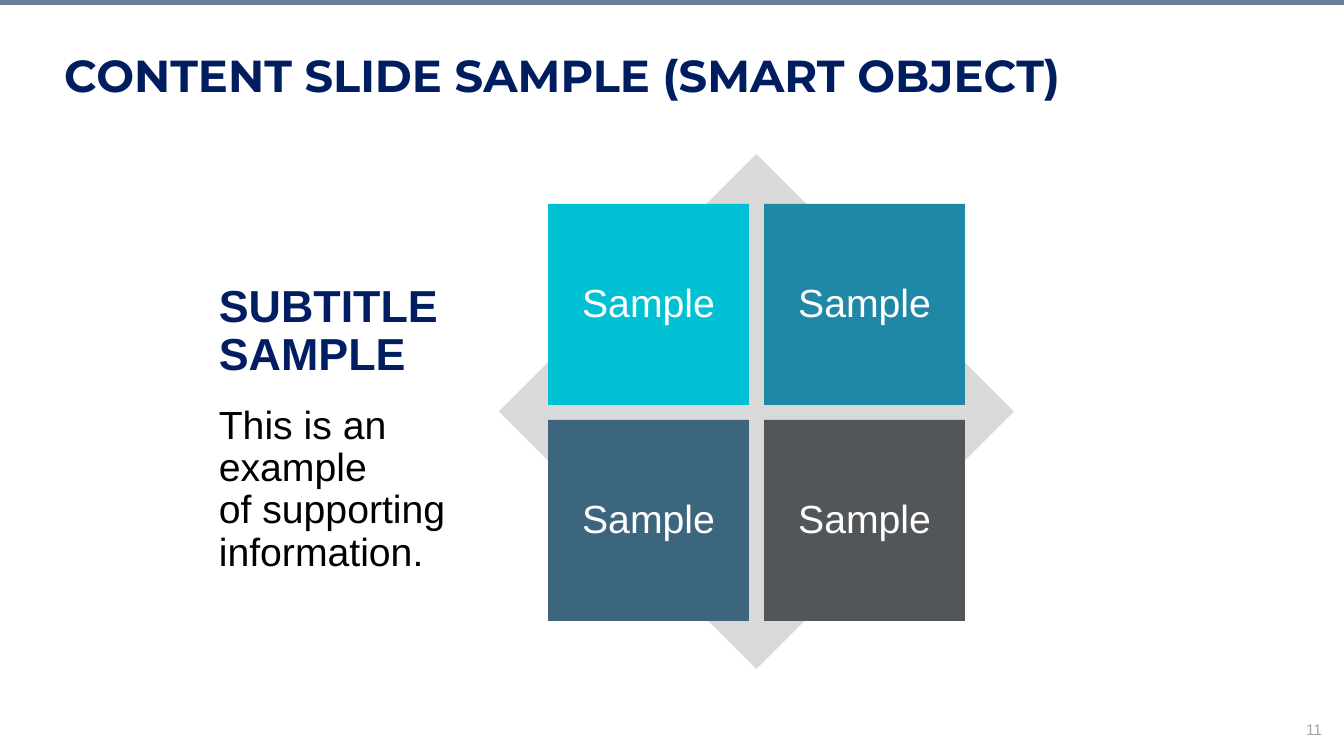
from pptx import Presentation
from pptx import util as u
from pptx.dml.color import RGBColor
from pptx.enum import shapes, text

SCALE = 914400 / 100.8
HUES = {
    "bar": "688096", "diamond": "D9D9D9", "cyan": "00C1D4", "blue": "2088A7",
    "steel": "3C667E", "slate": "535659", "title": "001D5F", "navy": "001E61",
    "black": "000000", "white": "FFFFFF", "grey": "A6A6A6",
}


def px(num):
    return u.Emu(round(num * SCALE))


def hue(name):
    return RGBColor.from_string(HUES[name])


class Deck:
    def __init__(self, wide, high):
        self.prs = Presentation()
        self.prs.slide_width, self.prs.slide_height = px(wide), px(high)
        self.slide = self.prs.slides.add_slide(self.prs.slide_layouts[5])
        self.font = "Arial"

    def place(self, item, *box):
        for key, num in zip(("left", "top", "width", "height"), box):
            setattr(item, key, px(num))

    def fill_text(self, frame, lines, anchor="TOP", align="LEFT"):
        look = {"word_wrap": True, "auto_size": text.MSO_AUTO_SIZE.NONE,
                "vertical_anchor": text.MSO_ANCHOR[anchor]}
        for key, val in look.items():
            setattr(frame, key, val)
        for num, (words, size, color, more) in enumerate(lines):
            para = frame.add_paragraph() if num else frame.paragraphs[0]
            para.text = words
            para.alignment = text.PP_ALIGN[align]
            para.line_spacing = 0.9
            para.space_before = u.Pt(more.get("before", 0))
            style = {"name": more.get("font", self.font), "size": u.Pt(size),
                     "bold": more.get("bold", False)}
            for key, val in style.items():
                setattr(para.runs[0].font, key, val)
            para.runs[0].font.color.rgb = hue(color)

    def title(self, box, line):
        item = self.slide.shapes.title
        self.place(item, *box)
        self.fill_text(item.text_frame, [line])

    def label(self, box, lines, **look):
        item = self.slide.shapes.add_textbox(*map(px, box))
        self.fill_text(item.text_frame, lines, **look)

    def shape(self, kind, box, color, lines=()):
        item = self.slide.shapes.add_shape(kind, *map(px, box))
        item.shadow.inherit = False
        item.fill.solid()
        item.fill.fore_color.rgb = hue(color)
        item.line.fill.background()
        self.fill_text(item.text_frame, lines, "MIDDLE", "CENTER")


def main():
    deck = Deck(1344, 756)
    kind = shapes.MSO_SHAPE
    deck.label((927, 717, 405, 29), [("11", 11, "grey", {})], align="RIGHT")
    deck.shape(kind.RECTANGLE, (0, 0, 1344, 5), "bar")
    deck.shape(kind.DIAMOND, (499, 154, 515, 515), "diamond")

    side, step = 201, 216
    for num, color in enumerate(("cyan", "blue", "steel", "slate")):
        row, col = divmod(num, 2)
        box = (548 + col * step, 204 + row * step, side, side)
        deck.shape(kind.RECTANGLE, box, color, [("Sample", 28, "white", {})])

    deck.title((54, 49, 1234, 78), (
        "CONTENT SLIDE SAMPLE (SMART OBJECT)", 32, "title",
        {"font": "Montserrat", "bold": True}))
    deck.label((209, 353, 265, 152), [
        ("SUBTITLE SAMPLE", 32, "navy", {"bold": True}),
        ("This is an example", 28, "black", {"before": 18}),
        ("of supporting information.", 28, "black", {}),
    ], anchor="MIDDLE")
    deck.prs.save("out.pptx")


if __name__ == "__main__":
    main()
